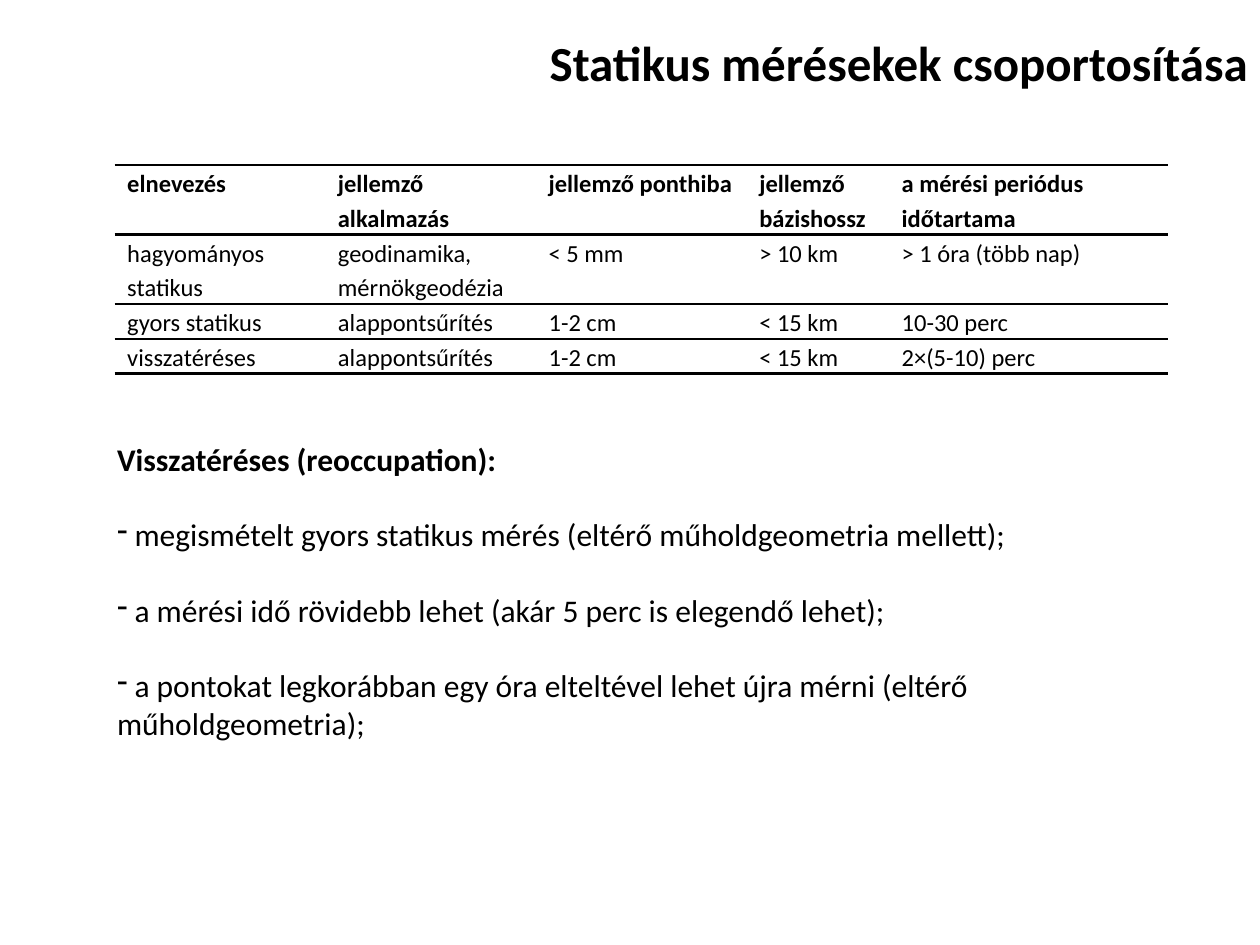
from dataclasses import dataclass

from lxml import etree
from pptx import Presentation
from pptx.dml.color import RGBColor
from pptx.enum import text
from pptx.oxml import ns
from pptx.util import Pt


@dataclass(frozen=True)
class Theme:
    font: str = "Calibri"
    ink: str = "000000"
    title_size: float = 28
    body_size: float = 18
    table_size: float = 14
    thick: float = 1.5
    thin: float = 1


@dataclass(frozen=True)
class Frame:
    left: float
    top: float
    width: float
    height: float

    def lengths(self) -> list:
        return [Pt(v) for v in (self.left, self.top, self.width, self.height)]


@dataclass(frozen=True)
class TableRow:
    height: float
    rule_above: float
    rule_below: float
    cells: tuple
    bold: bool = False


THEME = Theme()
TITLE = "Statikus mérésekek csoportosítása"
TITLE_FRAME = Frame(301.7, 15.1, 418.3, 41)
TABLE_FRAME = Frame(65.5, 94.3, 602, 119)
NOTES_FRAME = Frame(59.8, 247.7, 601, 181.5)
COLUMN_WIDTHS = (120.4, 120.4, 120.4, 81.4, 159.6)
ROWS = (
    TableRow(39.7, THEME.thick, THEME.thick,
             ("elnevezés", "jellemző alkalmazás", "jellemző ponthiba",
              "jellemző bázishossz", "a mérési periódus időtartama"), bold=True),
    TableRow(39.7, THEME.thick, THEME.thin,
             ("hagyományos statikus", "geodinamika, mérnökgeodézia",
              "< 5 mm", "> 10 km", "> 1 óra (több nap)")),
    TableRow(19.9, THEME.thin, THEME.thin,
             ("gyors statikus", "alappontsűrítés", "1-2 cm", "< 15 km", "10-30 perc")),
    TableRow(19.9, THEME.thin, THEME.thick,
             ("visszatéréses", "alappontsűrítés", "1-2 cm", "< 15 km", "2×(5-10) perc")),
)
NOTES_HEADING = "Visszatéréses (reoccupation):"
NOTES = (
    " megismételt gyors statikus mérés (eltérő műholdgeometria mellett);",
    " a mérési idő rövidebb lehet (akár 5 perc is elegendő lehet);",
    " a pontokat legkorábban egy óra elteltével lehet újra mérni (eltérő műholdgeometria);",
)
NOTE_GAP = 21.6


def add_span(para, words: str, size: float, bold: bool = False) -> None:
    span = para.add_run()
    span.text = words
    span.font.name = THEME.font
    span.font.size = Pt(size)
    span.font.bold = bold
    span.font.color.rgb = RGBColor.from_string(THEME.ink)


def set_rules(cell, above: float, below: float) -> None:
    """Draw only the horizontal borders of a cell; a width of 0 means no line."""
    properties = cell._tc.get_or_add_tcPr()
    widths = (("a:lnL", 0), ("a:lnR", 0), ("a:lnT", above), ("a:lnB", below))
    for position, (tag, width) in enumerate(widths):
        line = etree.Element(ns.qn(tag), w=str(int(Pt(width))))
        if width:
            fill = etree.SubElement(line, ns.qn("a:solidFill"))
            etree.SubElement(fill, ns.qn("a:srgbClr"), val=THEME.ink)
        else:
            etree.SubElement(line, ns.qn("a:noFill"))
        properties.insert(position, line)


def add_measurement_table(page) -> None:
    frame = page.shapes.add_table(len(ROWS), len(COLUMN_WIDTHS), *TABLE_FRAME.lengths())
    table = frame.table
    table.first_row = table.horz_banding = False
    for column, width in zip(table.columns, COLUMN_WIDTHS):
        column.width = Pt(width)
    for line, row in zip(table.rows, ROWS):
        line.height = Pt(row.height)
        for cell, words in zip(line.cells, row.cells):
            cell.margin_left = cell.margin_right = Pt(7.2)
            cell.margin_top = cell.margin_bottom = Pt(0)
            cell.fill.background()
            set_rules(cell, row.rule_above, row.rule_below)
            para = cell.text_frame.paragraphs[0]
            para.line_spacing = 1.15
            add_span(para, words, THEME.table_size, row.bold)


def add_box(page, frame: Frame, wrap: bool):
    box = page.shapes.add_textbox(*frame.lengths())
    box.text_frame.word_wrap = wrap
    box.text_frame.auto_size = text.MSO_AUTO_SIZE.SHAPE_TO_FIT_TEXT
    return box.text_frame


def add_title(page) -> None:
    para = add_box(page, TITLE_FRAME, wrap=False).paragraphs[0]
    para.alignment = text.PP_ALIGN.RIGHT
    add_span(para, TITLE, THEME.title_size, bold=True)


def add_notes_list(page) -> None:
    body = add_box(page, NOTES_FRAME, wrap=True)
    add_span(body.paragraphs[0], NOTES_HEADING, THEME.body_size, bold=True)
    for note in NOTES:
        para = body.add_paragraph()
        para.space_before = Pt(NOTE_GAP)
        etree.SubElement(para._p.get_or_add_pPr(), ns.qn("a:buChar"), char="-")
        add_span(para, note, THEME.body_size)


def main() -> None:
    deck = Presentation()
    deck.slide_width, deck.slide_height = Pt(720), Pt(540)
    page = deck.slides.add_slide(deck.slide_layouts[6])
    add_measurement_table(page)
    add_title(page)
    add_notes_list(page)
    deck.save("out.pptx")


if __name__ == "__main__":
    main()
